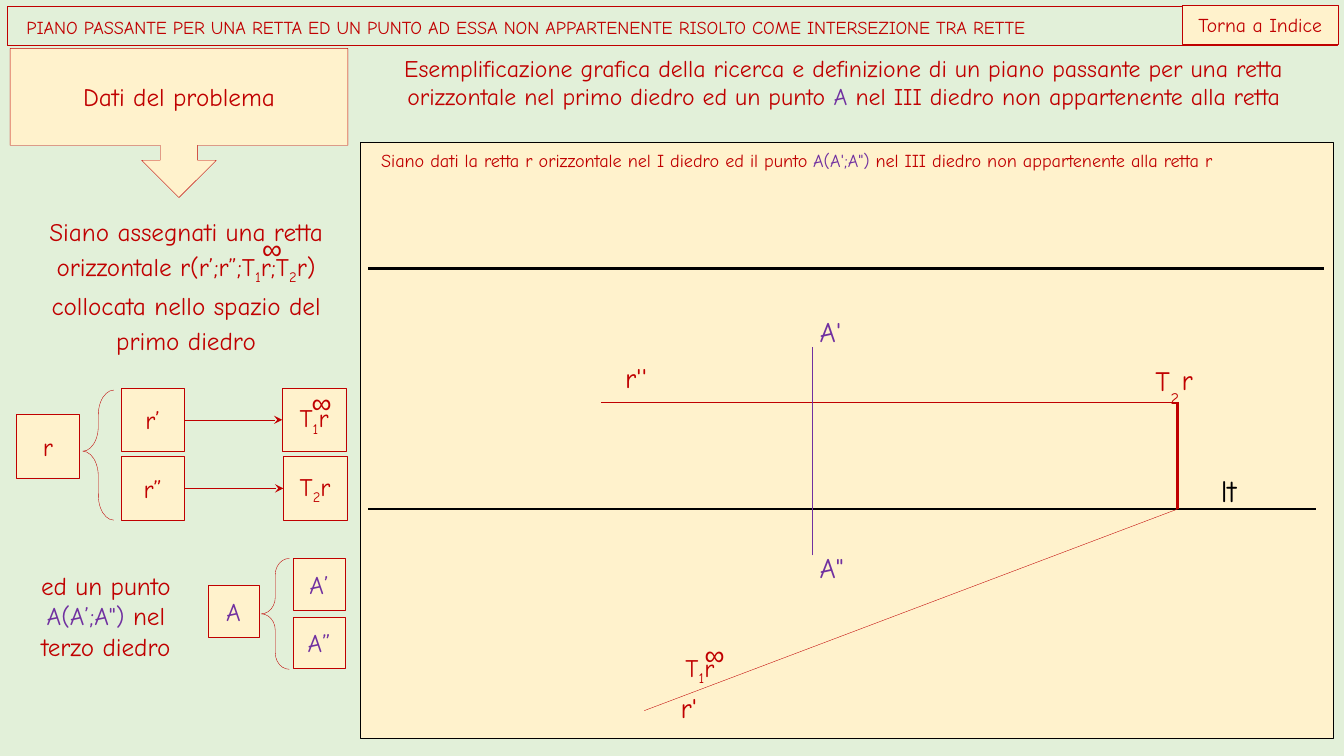
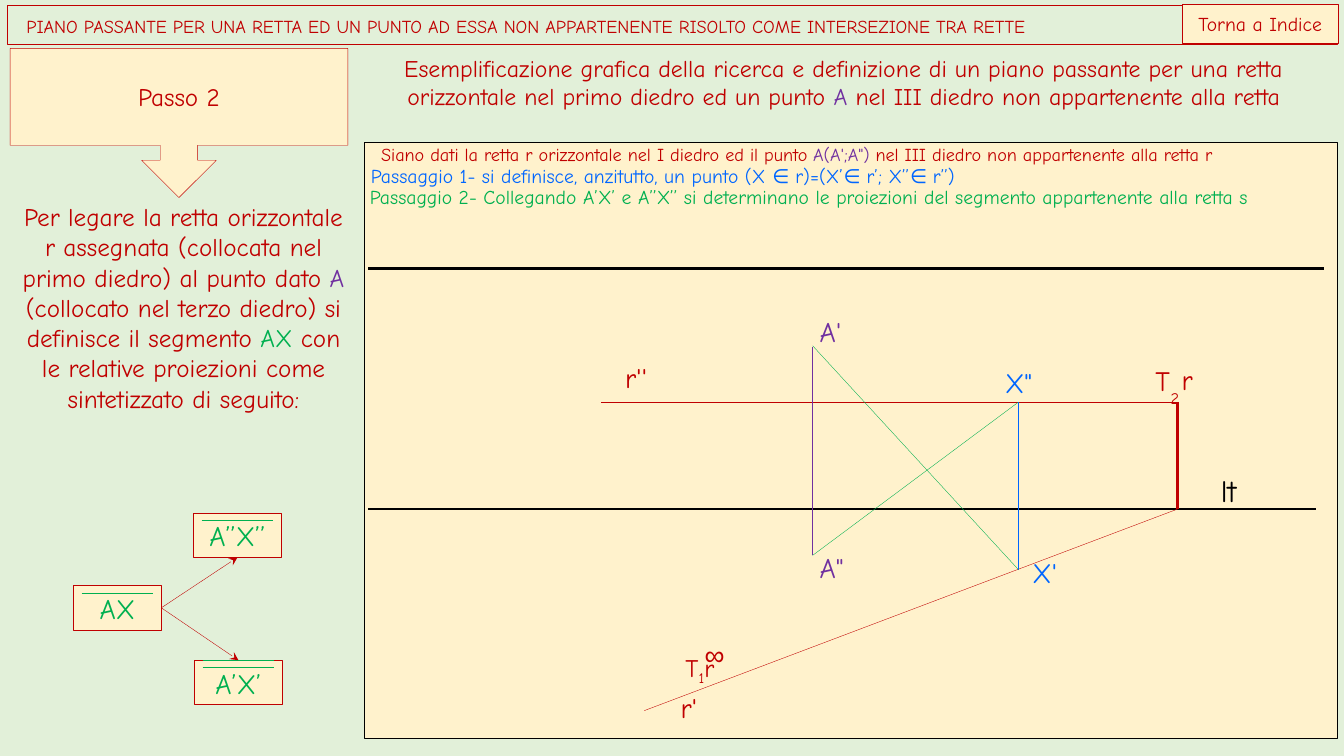
from collections import namedtuple
from dataclasses import dataclass

from lxml.etree import SubElement
from pptx import Presentation
from pptx.dml.color import RGBColor
from pptx.enum.shapes import MSO_CONNECTOR, MSO_SHAPE
from pptx.enum.text import MSO_ANCHOR, MSO_AUTO_SIZE, PP_ALIGN
from pptx.oxml.ns import qn
from pptx.util import Emu, Pt

Bit = namedtuple("Bit", "text ink low", defaults=(None, False))


@dataclass(frozen=True)
class Theme:
    back: str = "E2F0D9"
    cream: str = "FFF2CC"
    red: str = "C00000"
    black: str = "000000"
    violet: str = "7030A0"
    blue: str = "0066FF"
    green: str = "00B050"
    font: str = "Comic Neue"
    sign: str = "Arial"
    small: int = 13
    note: int = 14
    head: int = 17
    body: int = 18
    label: int = 20
    large: int = 22
    thin: float = 0.25
    hair: float = 0


T = Theme()
SCALE = 9144
TOP, LEFT, BOTTOM, RIGHT = range(4)


def px(*nums):
    return [Emu(round(num * SCALE)) for num in nums]


def tint(ink):
    return RGBColor.from_string(ink)


class Deck:
    def __init__(self, wide, high):
        self.show = Presentation()
        self.show.slide_width, self.show.slide_height = px(wide, high)
        self.slide = None

    def page(self):
        self.slide = self.show.slides.add_slide(self.show.slide_layouts[6])
        fill = self.slide.background.fill
        fill.solid()
        fill.fore_color.rgb = tint(T.back)

    def runs(self, frame, bits, size, ink, align, font=T.font, space=None):
        para = frame.paragraphs[0]
        para.alignment = align
        if space:
            para.line_spacing = space
        for bit in bits:
            bit = Bit(bit) if isinstance(bit, str) else bit
            run = para.add_run()
            run.text = bit.text
            run.font.name = font
            run.font.size = Pt(size)
            run.font.color.rgb = tint(bit.ink or ink)
            if bit.low:
                run._r.get_or_add_rPr().set("baseline", "-25000")

    def box(self, area, bits=(), size=T.body, ink=T.red, fill=T.cream, edge=T.red,
            kind=MSO_SHAPE.RECTANGLE, align=PP_ALIGN.CENTER,
            anchor=MSO_ANCHOR.MIDDLE, space=None, turns=()):
        shape = self.slide.shapes.add_shape(kind, *px(*area))
        shape.shadow.inherit = False
        if fill:
            shape.fill.solid()
            shape.fill.fore_color.rgb = tint(fill)
        else:
            shape.fill.background()
        shape.line.color.rgb = tint(edge)
        shape.line.width = Pt(T.thin)
        for num, turn in enumerate(turns):
            shape.adjustments[num] = turn
        if bits:
            frame = shape.text_frame
            frame.word_wrap = True
            frame.vertical_anchor = anchor
            self.runs(frame, bits, size, ink, align, space=space)
        return shape

    def cell(self, x, y, side, bits, ink=T.red):
        shape = self.box((x, y, side, side), bits, ink=ink)
        shape.text_frame.paragraphs[0].space_after = Pt(10)
        return shape

    def brace(self, area, turns):
        self.box(area, fill=None, kind=MSO_SHAPE.LEFT_BRACE, turns=turns)

    def text(self, area, bits, size=T.body, ink=T.red, align=PP_ALIGN.LEFT,
             font=T.font, space=None, wrap=True, tight=False):
        frame = self.slide.shapes.add_textbox(*px(*area)).text_frame
        frame.word_wrap = wrap
        frame.auto_size = MSO_AUTO_SIZE.SHAPE_TO_FIT_TEXT
        if tight:
            frame.margin_left = frame.margin_right = 0
            frame.margin_top = frame.margin_bottom = 0
        self.runs(frame, bits, size, ink, align, font, space)

    def label(self, x, y, wide, bit, ink=T.red, size=T.label, high=34, font=T.font):
        self.text((x, y, wide, high), [bit], size, ink, font=font,
                  wrap=False, tight=True)

    def far(self, x, y):
        self.label(x, y, 20, "∞", font=T.sign)

    def line(self, start, end, ink=T.red, width=T.thin, head=False):
        link = self.slide.shapes.add_connector(
            MSO_CONNECTOR.STRAIGHT, *px(*start, *end))
        link.line.color.rgb = tint(ink)
        link.line.width = Pt(width)
        props = link._element.spPr
        if head:
            SubElement(props.find(qn("a:ln")), qn("a:tailEnd"), type="stealth")
        SubElement(props, qn("a:effectLst"))
        return link

    def arrow(self, first, side, last, goal):
        link = self.line((0, 0), (1, 1), head=True)
        link.begin_connect(first, side)
        link.end_connect(last, goal)

    def barred(self, x, y, name):
        shape = self.box((x, y, 87, 44), [name], T.label, T.green,
                         anchor=MSO_ANCHOR.BOTTOM)
        self.line((x + 8, y + 7), (x + 79, y + 7), T.green)
        return shape

    def frame(self, step, top):
        self.page()
        self.box((10, 48, 335, 148), [step], kind=MSO_SHAPE.DOWN_ARROW_CALLOUT)
        self.text((345, 48, 984, 67), [
            "Esemplificazione grafica della ricerca e definizione di un piano "
            "passante per una retta orizzontale nel primo diedro ed un punto ",
            Bit("A ", T.violet),
            "nel III diedro non appartenente alla retta",
        ], T.head, align=PP_ALIGN.CENTER)
        band = self.box((7, top, 1319, 39), [" "], T.label, fill=None,
                        align=PP_ALIGN.LEFT, space=0.9)
        self.runs(band.text_frame, [
            "PIANO PASSANTE PER UNA RETTA ED UN PUNTO AD ESSA NON APPARTENENTE "
            "RISOLTO COME INTERSEZIONE TRA RETTE",
        ], T.small, T.red, PP_ALIGN.LEFT)
        self.box((1173, top - 1, 154, 39), ["Torna a Indice"], T.note)

    def plot(self, left, top):
        self.box((left, 141, 965, 591), edge=T.black)
        self.text((378, top, 925, 22), [
            "Siano dati la retta r orizzontale nel I diedro ed il punto ",
            Bit("A(A';A\") ", T.violet),
            "nel III diedro non appartenente alla retta r",
        ], T.small, tight=True)
        self.label(1211, 468, 35, "lt", T.black, T.large, 51)
        self.label(813, 312, 31, "A'", T.violet)
        self.label(813, 546, 32, 'A"', T.violet)
        self.label(675, 685, 24, "r'")
        self.label(620, 358, 35, "r''")
        self.label(1146, 361, 19, "T")
        self.label(1161, 367, 11, Bit("2", low=True), high=22)
        self.label(1172, 360, 13, "r", high=28)
        self.text((670, 642, 60, 40), ["T", Bit("1", low=True), "r"])
        self.far(699, 632)
        self.line((365, 266), (1313, 266), T.black, T.hair)
        self.line((365, 505), (1305, 505), T.black, T.hair)
        self.line((1168, 399), (1168, 505), width=T.hair)
        self.line((1168, 399), (596, 399))
        self.line((1168, 505), (639, 705))
        self.line((806, 551), (806, 344), T.violet)


def given(deck):
    deck.frame("Dati del problema", 6)
    deck.plot(357, 148)
    deck.text((17, 205, 335, 147), [
        "Siano assegnati una retta orizzontale r(r’;r”;T", Bit("1", low=True),
        "r;T", Bit("2", low=True),
        "r) collocata nello spazio del primo diedro",
    ], align=PP_ALIGN.CENTER, space=1.15)
    deck.far(260, 230)
    deck.cell(16, 411, 63, ["r"])
    deck.brace((82, 387, 31, 129), (0.8, 0.47))
    for num, (name, x) in enumerate((("r’", 280), ("r”", 281)), 1):
        y = 317 + 68 * num
        view = deck.cell(120, y, 63, [name])
        trace = deck.cell(x, y, 63, ["T", Bit(str(num), low=True), "r"])
        deck.arrow(view, RIGHT, trace, LEFT)
    deck.far(309, 382)
    deck.text((14, 561, 182, 101), [
        "ed un punto ", Bit("A(A’;A\") ", T.violet), "nel terzo diedro",
    ], align=PP_ALIGN.CENTER)
    deck.brace((259, 554, 28, 110), (0.58, 0.5))
    for x, y, name in ((206, 581, "A"), (291, 554, "A’"), (291, 612, "A”")):
        deck.cell(x, y, 51, [name], T.violet)


def second(deck):
    deck.frame("Passo 2", 5)
    deck.plot(361, 142)
    deck.text((358, 158, 634, 34), [
        "Passaggio 1- si definisce, anzitutto, un punto "
        "(X ∈ r)=(X’∈ r’; X’’∈ r’’)",
    ], T.note, T.blue)
    deck.text((357, 179, 956, 34), [
        "Passaggio 2- Collegando A’X’ e A’’X’’ si determinano le proiezioni "
        "del segmento appartenente alla retta s",
    ], T.note, T.green)
    deck.line((1010, 399), (1010, 565), T.blue)
    deck.label(1024, 551, 31, "X'", T.blue)
    deck.label(997, 363, 32, 'X"', T.blue)
    deck.line((806, 343), (1010, 565), T.green)
    deck.line((806, 551), (1010, 399), T.green)
    deck.text((7, 195, 350, 283), [
        "Per legare la retta orizzontale r assegnata (collocata nel primo "
        "diedro) al punto dato ",
        Bit("A ", T.violet),
        "(collocato nel terzo diedro) si definisce il segmento ",
        Bit("AX", T.green),
        " con le relative proiezioni come sintetizzato di seguito:",
    ], align=PP_ALIGN.CENTER)
    whole = deck.barred(73, 581, "AX")
    upper = deck.barred(192, 509, "A’’X’’")
    lower = deck.barred(193, 655, "A’X’")
    deck.line((201, 655), (272, 655), T.green)
    deck.arrow(whole, RIGHT, upper, BOTTOM)
    deck.arrow(whole, RIGHT, lower, TOP)


def main():
    deck = Deck(1333, 750)
    given(deck)
    second(deck)
    deck.show.save("out.pptx")


if __name__ == "__main__":
    main()
